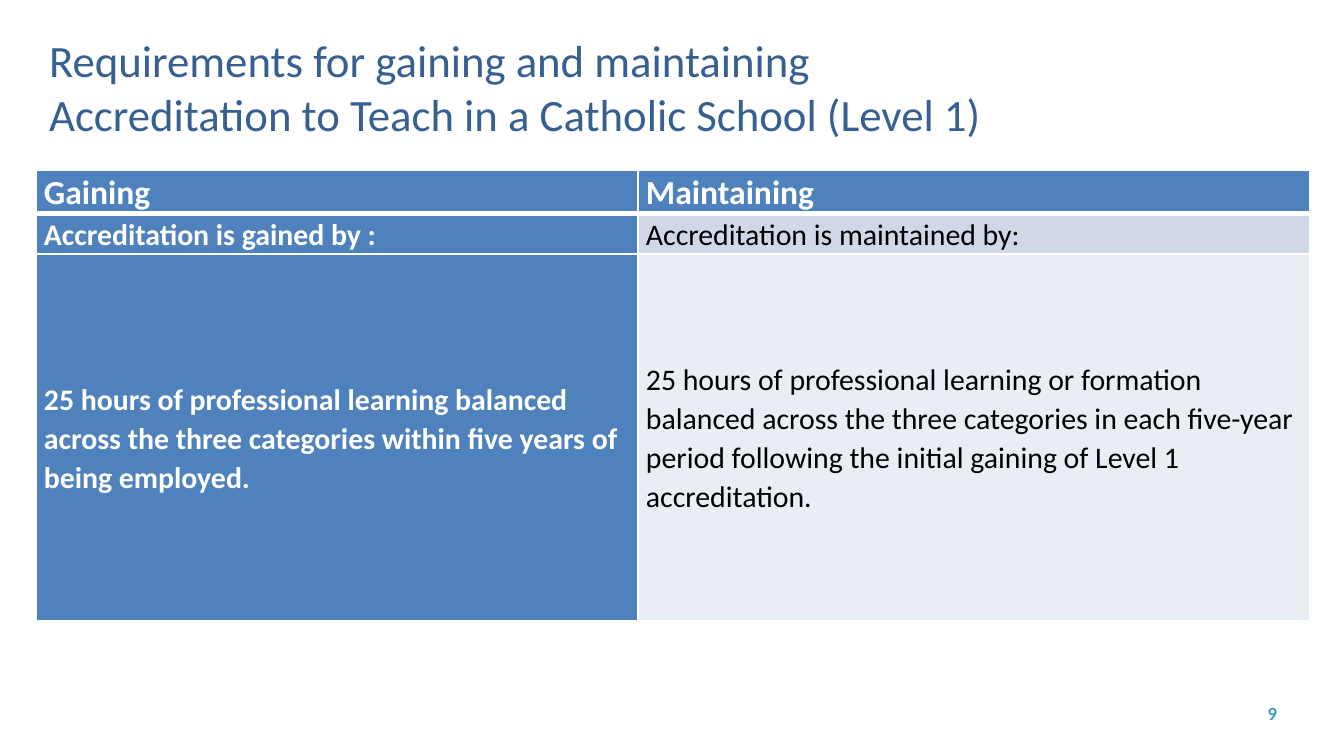
import dataclasses

import pptx
import pptx.dml.color
import pptx.enum.text
import pptx.oxml
import pptx.oxml.ns
import pptx.util

EMU_PER_PX = 914400 / 134.4
ALIGN = pptx.enum.text.PP_ALIGN
ANCHOR = pptx.enum.text.MSO_ANCHOR


def px(n):
    return pptx.util.Emu(round(n * EMU_PER_PX))


@dataclasses.dataclass(frozen=True)
class Theme:
    font: str = "Calibri"
    title: str = "376092"
    number: str = "3E9DC8"
    header: str = "4F81BD"
    band: str = "D0D8E8"
    pale: str = "E9EDF4"
    white: str = "FFFFFF"
    black: str = "000000"
    title_size: int = 24
    header_size: int = 18
    body_size: int = 16
    number_size: int = 10


class SlideBuilder:
    def __init__(self, slide, theme):
        self.slide = slide
        self.theme = theme

    def add_run(self, p, text, size, color, bold=False):
        r = p.add_run()
        r.text = text
        r.font.name = self.theme.font
        r.font.size = pptx.util.Pt(size)
        r.font.bold = bold
        r.font.color.rgb = pptx.dml.color.RGBColor.from_string(color)

    def add_text(self, box, lines, size, color, bold=False, align=ALIGN.LEFT,
                 anchor=ANCHOR.TOP, inset=None, wrap=True):
        sp = self.slide.shapes.add_textbox(*map(px, box))
        tf = sp.text_frame
        tf.word_wrap = wrap
        tf.vertical_anchor = anchor
        if not wrap:
            tf.auto_size = pptx.enum.text.MSO_AUTO_SIZE.SHAPE_TO_FIT_TEXT
        if inset is not None:
            tf.margin_left = tf.margin_right = px(inset)
            tf.margin_top = tf.margin_bottom = px(inset)
        for i, line in enumerate(lines):
            p = tf.add_paragraph() if i else tf.paragraphs[0]
            p.alignment = align
            self.add_run(p, line, size, color, bold)

    def set_borders(self, cell, widths):
        """Draw cell borders; widths maps each side (L, R, T, B) to points."""
        tc_pr = cell._tc.get_or_add_tcPr()
        for i, side in enumerate("LRTB"):
            ln = pptx.oxml.parse_xml(
                f'<a:ln{side} {pptx.oxml.ns.nsdecls("a")} w="{pptx.util.Pt(widths[side])}">'
                f'<a:solidFill><a:srgbClr val="{self.theme.white}"/></a:solidFill>'
                f'</a:ln{side}>')
            tc_pr.insert(i, ln)

    def add_cell(self, cell, text, size, fill, color, bold, borders):
        cell.fill.solid()
        cell.fill.fore_color.rgb = pptx.dml.color.RGBColor.from_string(fill)
        cell.vertical_anchor = ANCHOR.MIDDLE
        cell.margin_left = cell.margin_right = px(8)
        cell.margin_top = cell.margin_bottom = 0
        p = cell.text_frame.paragraphs[0]
        p.line_spacing = 1.07
        self.add_run(p, text, size, color, bold)
        self.set_borders(cell, borders)

    def add_table(self, left, top, widths, heights, rows, right_fills):
        """Fill a table whose header row and first column share one style."""
        t = self.theme
        frame = self.slide.shapes.add_table(
            len(heights), len(widths), px(left), px(top),
            px(sum(widths)), px(sum(heights)))
        table = frame.table
        for column, width in zip(table.columns, widths):
            column.width = px(width)
        for i, (height, texts) in enumerate(zip(heights, rows)):
            table.rows[i].height = px(height)
            size = t.body_size if i else t.header_size
            borders = {"L": 1, "R": 1, "T": 3 if i == 1 else 1, "B": 1 if i else 3}
            for j, text in enumerate(texts):
                strong = i == 0 or j == 0
                fill = t.header if strong else right_fills[i - 1]
                color = t.white if strong else t.black
                self.add_cell(table.cell(i, j), text, size, fill, color, strong, borders)


def main():
    theme = Theme()
    prs = pptx.Presentation()
    prs.slide_width, prs.slide_height = px(1344), px(756)
    s = SlideBuilder(prs.slides.add_slide(prs.slide_layouts[6]), theme)

    s.add_text((956, 702, 321, 23), ["9"], theme.number_size, theme.number,
               bold=True, align=ALIGN.RIGHT, inset=0)
    s.add_table(
        36, 170, widths=(602, 672), heights=(43, 41, 367),
        rows=[
            ("Gaining", "Maintaining"),
            ("Accreditation is gained by :", "Accreditation is maintained by:"),
            ("25 hours of professional learning balanced across the three "
             "categories within five years of being employed.",
             "25 hours of professional learning or formation balanced across "
             "the three categories in each five-year period following the "
             "initial gaining of Level 1 accreditation."),
        ],
        right_fills=(theme.band, theme.pale))
    s.add_text((36, 26, 966, 122),
               ["Requirements for gaining and maintaining",
                "Accreditation to Teach in a Catholic School (Level 1)"],
               theme.title_size, theme.title, anchor=ANCHOR.MIDDLE, wrap=False)
    prs.save("out.pptx")


if __name__ == "__main__":
    main()
